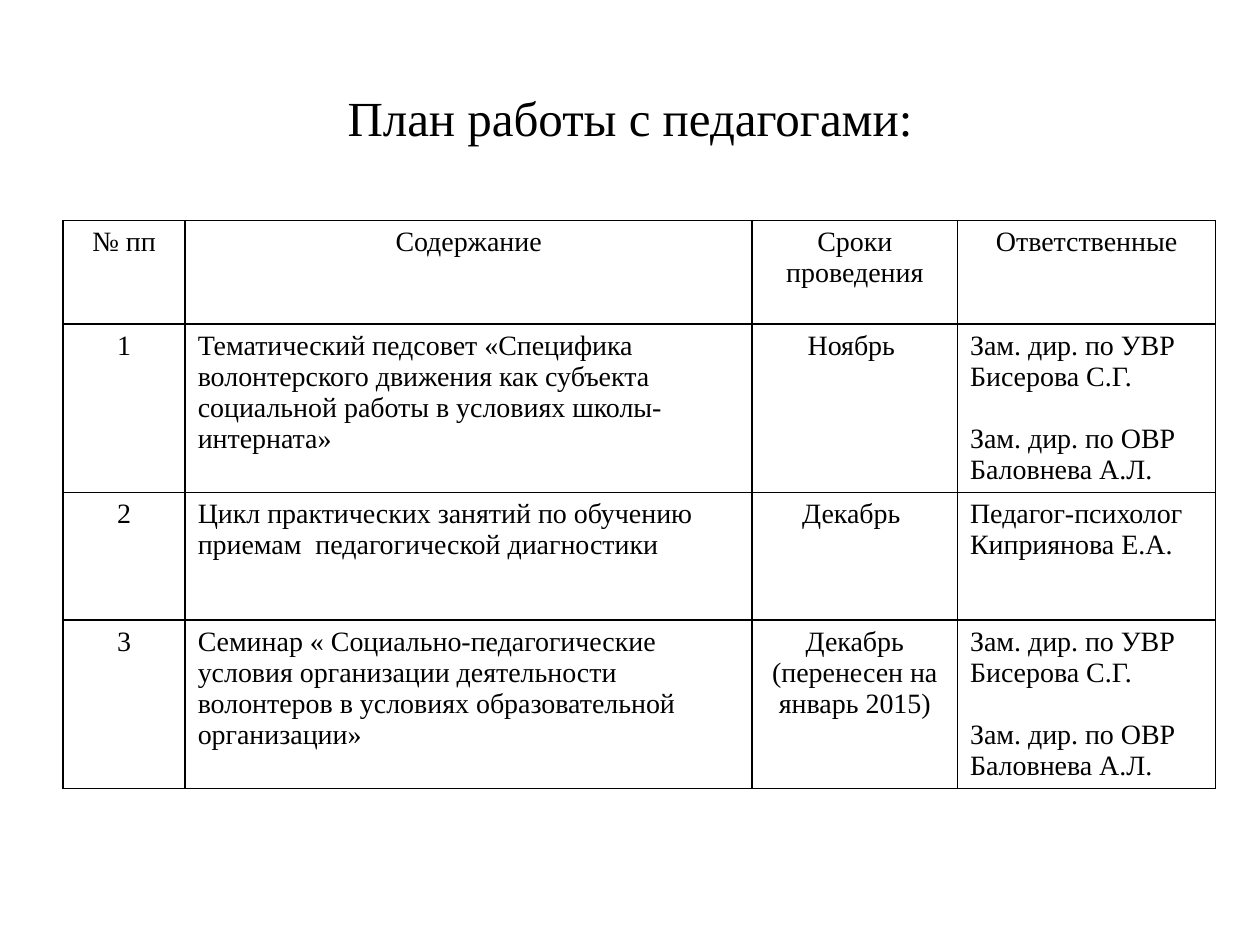
from lxml.etree import SubElement
from pptx import Presentation
from pptx.dml.color import RGBColor
from pptx.enum.text import MSO_ANCHOR, PP_ALIGN
from pptx.oxml.ns import qn
from pptx.util import Inches, Pt

COLORS = {"text": "000000", "border": "000000", "paper": "FFFFFF"}
FONT = "Times New Roman"
COLUMN_WIDTHS = [0.97, 4.5, 1.63, 2.05]
ROW_HEIGHTS = [0.82, 1.34, 1.01, 1.34]
CENTERED_COLUMNS = (0, 2)
DEPUTIES = [
    "Зам. дир. по УВР",
    "Бисерова С.Г.",
    "Зам. дир. по ОВР",
    "Баловнева А.Л.",
]
SECOND_DEPUTY = 2
PLAN = [
    ["№ пп", "Содержание", "Сроки проведения", "Ответственные"],
    [
        "1",
        "Тематический педсовет «Специфика волонтерского движения как субъекта "
        "социальной работы в условиях школы-интерната»",
        "Ноябрь ",
        DEPUTIES,
    ],
    [
        "2",
        "Цикл практических занятий по обучению приемам  педагогической диагностики",
        "Декабрь ",
        "Педагог-психолог Киприянова Е.А.",
    ],
    [
        "3",
        "Семинар « Социально-педагогические условия организации деятельности "
        "волонтеров в условиях образовательной организации»",
        "Декабрь (перенесен на январь 2015)",
        DEPUTIES,
    ],
]


def format_paragraph(paragraph, size, alignment):
    paragraph.alignment = alignment
    paragraph.font.size = Pt(size)
    paragraph.font.name = FONT
    paragraph.font.color.rgb = RGBColor.from_string(COLORS["text"])


def add_borders(cell):
    properties = cell._tc.get_or_add_tcPr()
    for side in ("lnL", "lnR", "lnT", "lnB"):
        line = SubElement(properties, qn(f"a:{side}"), w=str(Pt(1)))
        fill = SubElement(line, qn("a:solidFill"))
        SubElement(fill, qn("a:srgbClr"), val=COLORS["border"])


def fill_cell(cell, content, alignment):
    add_borders(cell)
    cell.fill.solid()
    cell.fill.fore_color.rgb = RGBColor.from_string(COLORS["paper"])
    lines = content if isinstance(content, list) else [content]
    cell.text = "\n".join(lines)
    for index, paragraph in enumerate(cell.text_frame.paragraphs):
        format_paragraph(paragraph, 16, alignment)
        if index == SECOND_DEPUTY:
            paragraph.space_before = Pt(18)


def place_title(page, left, top, width, height):
    title = page.shapes.title
    title.left, title.top, title.width, title.height = left, top, width, height
    title.text_frame.text = "План работы с педагогами:"
    title.text_frame.vertical_anchor = MSO_ANCHOR.MIDDLE
    format_paragraph(title.text_frame.paragraphs[0], 28, PP_ALIGN.CENTER)


def place_plan(page, left, top, width, height):
    frame = page.shapes.add_table(len(PLAN), len(COLUMN_WIDTHS), left, top, width, height)
    table = frame.table
    table.first_row = False
    table.horz_banding = False
    for column, share in zip(table.columns, COLUMN_WIDTHS):
        column.width = int(width * share / sum(COLUMN_WIDTHS))
    for row, share in zip(table.rows, ROW_HEIGHTS):
        row.height = int(height * share / sum(ROW_HEIGHTS))
    for row_index, entries in enumerate(PLAN):
        for column_index, content in enumerate(entries):
            centered = row_index == 0 or column_index in CENTERED_COLUMNS
            alignment = PP_ALIGN.CENTER if centered else PP_ALIGN.LEFT
            fill_cell(table.cell(row_index, column_index), content, alignment)


def main():
    deck = Presentation()
    deck.slide_width, deck.slide_height = Inches(10), Inches(7.5)
    page = deck.slides.add_slide(deck.slide_layouts[5])
    margin = int(deck.slide_width * 0.05)
    place_title(page, margin, Inches(0.3), deck.slide_width - 2 * margin, Inches(1.25))
    place_plan(
        page, margin, Inches(1.75), Inches(sum(COLUMN_WIDTHS)), Inches(sum(ROW_HEIGHTS))
    )
    deck.save("out.pptx")


if __name__ == "__main__":
    main()
